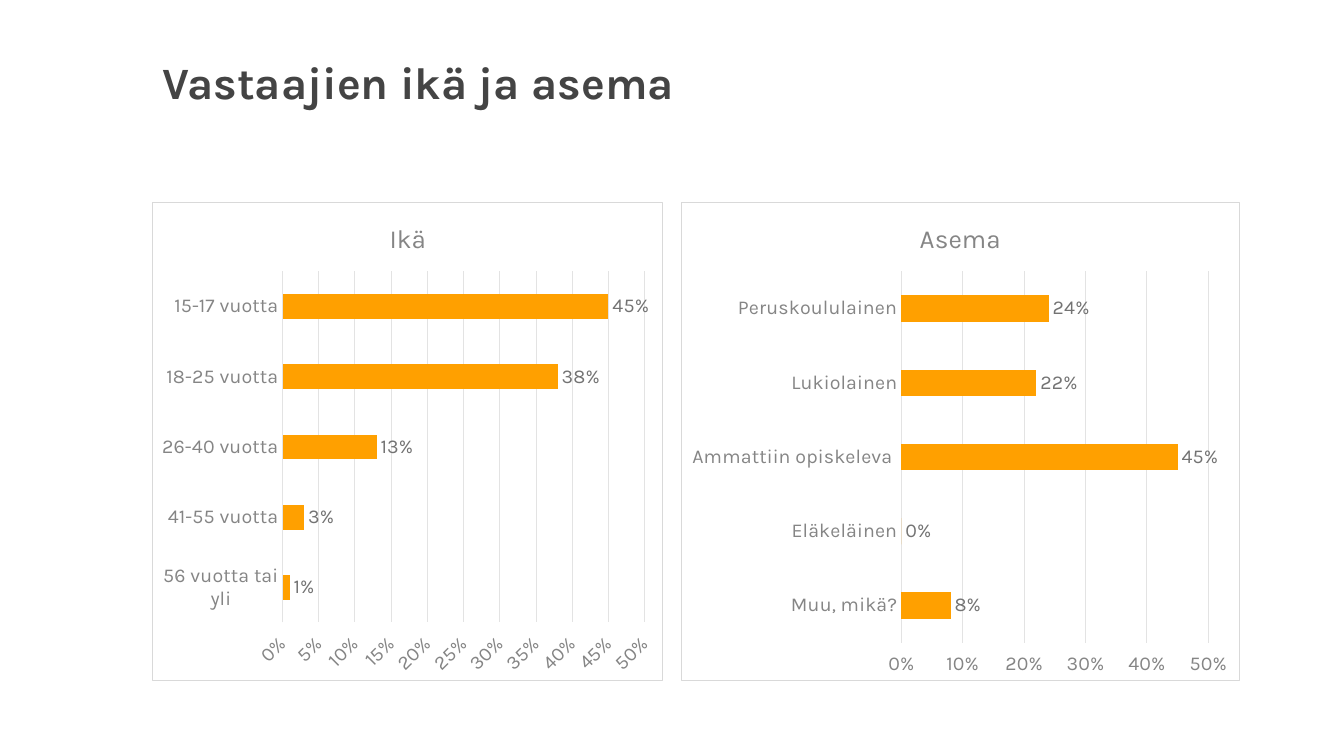
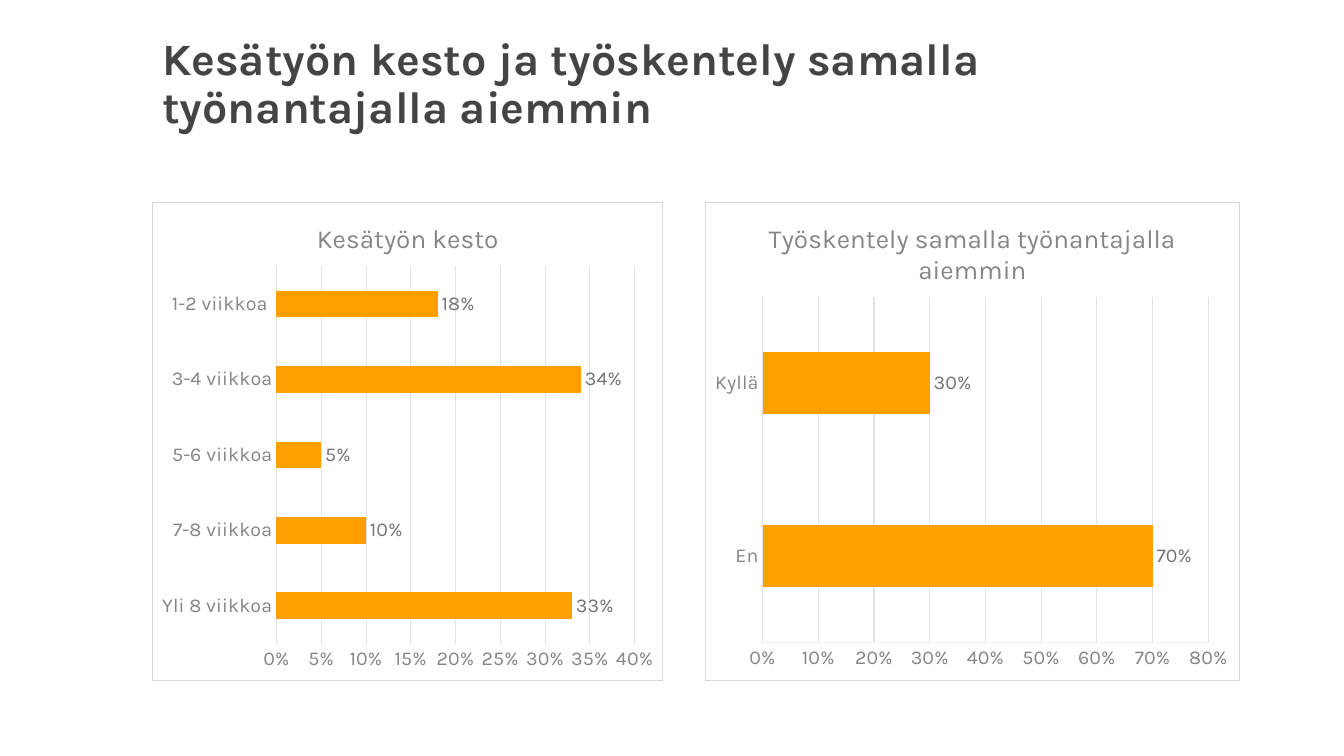
from dataclasses import dataclass
from typing import Any, NamedTuple

from pptx import Presentation
from pptx.chart.data import CategoryChartData
from pptx.dml.color import RGBColor
from pptx.enum.chart import XL_CHART_TYPE, XL_LABEL_POSITION, XL_TICK_LABEL_POSITION, XL_TICK_MARK
from pptx.enum.text import MSO_ANCHOR, MSO_AUTO_SIZE, PP_ALIGN
from pptx.oxml import parse_xml
from pptx.oxml.ns import nsdecls
from pptx.util import Inches, Pt

BAR = XL_CHART_TYPE.BAR_CLUSTERED
OUTSIDE = XL_LABEL_POSITION.OUTSIDE_END
NO_TICK = XL_TICK_MARK.NONE
HIGH = XL_TICK_LABEL_POSITION.HIGH
MIDDLE = MSO_ANCHOR.MIDDLE
FIXED = MSO_AUTO_SIZE.NONE
LEFT = PP_ALIGN.LEFT


class Box(NamedTuple):
    left: float
    top: float
    width: float
    height: float


@dataclass(frozen=True)
class Theme:
    face: str = "Karla"
    ink: str = "444444"
    axis: str = "858585"
    label: str = "737373"
    grid: str = "E3E3E3"
    pale: str = "F2F2F2"
    frame: str = "D9D9D9"
    bar: str = "FFA000"
    head: float = 32
    title: float = 18.6
    text: float = 14
    base: float = 10
    line: float = 0.75
    gap: int = 182


@dataclass(frozen=True)
class Panel:
    title: str
    left: float
    width: float
    rows: dict[str, float]
    plot: Box
    top: float
    step: float
    flip: bool = False
    tilt: int = 0
    base: bool = False


@dataclass(frozen=True)
class Page:
    title: str
    panels: tuple[Panel, ...]


THEME = Theme()
SIZE = (13.33, 7.5)
EDGE = 1.51
WIDTH = 10.79
HEAD = Box(EDGE, 0.27, WIDTH, 1.15)
TOP, HEIGHT = 2, 4.76
SLIM = 5.07
FORMAT = {"number_format": "0%", "number_format_is_linked": False}


def right(left: float) -> float:
    return EDGE + WIDTH - left


PAGES = (
    Page("Vastaajien ikä ja asema", (
        Panel("Ikä", EDGE, SLIM,
              {"15-17 vuotta": 0.45, "18-25 vuotta": 0.38, "26-40 vuotta": 0.13,
               "41-55 vuotta": 0.03, "56 vuotta tai yli": 0.01},
              Box(1.29, 0.69, 3.6, 3.49), 0.5, 0.05, flip=True, tilt=-45),
        Panel("Asema", 6.75, right(6.75),
              {"Peruskoululainen": 0.24, "Lukiolainen": 0.22,
               "Ammattiin opiskeleva ": 0.45, "Eläkeläinen": 0, "Muu, mikä?": 0.08},
              Box(2.19, 0.69, 3.05, 3.69), 0.5, 0.1, flip=True),
    )),
    Page("Kesätyön kesto ja työskentely samalla työnantajalla aiemmin", (
        Panel("Kesätyön kesto", EDGE, SLIM,
              {"Yli 8 viikkoa": 0.33, "7-8 viikkoa": 0.1, "5-6 viikkoa": 0.05,
               "3-4 viikkoa": 0.34, "1-2 viikkoa ": 0.18},
              Box(1.23, 0.64, 3.56, 3.75), 0.4, 0.05),
        Panel("Työskentely samalla työnantajalla aiemmin", 6.99, right(6.99),
              {"En": 0.7, "Kyllä": 0.3},
              Box(0.57, 0.94, 4.43, 3.44), 0.8, 0.1, base=True),
    )),
)


def put(target: Any, values: dict[str, Any]) -> None:
    for name, value in values.items():
        setattr(target, name, value)


def style(font: Any, size: float, color: str, bold: bool = False) -> None:
    put(font, {"name": THEME.face, "size": Pt(size), "bold": bold})
    font.color.rgb = RGBColor.from_string(color)


def stroke(line: Any, color: str) -> None:
    line.color.rgb = RGBColor.from_string(color)
    line.width = Pt(THEME.line)


def place(box: Box) -> dict[str, Any]:
    return {name: Inches(value) for name, value in box._asdict().items()}


def add_head(slide: Any, text: str) -> None:
    shape = slide.shapes.title
    put(shape, place(HEAD))
    frame = shape.text_frame
    frame.text = text
    put(frame, {"vertical_anchor": MIDDLE, "word_wrap": True, "auto_size": FIXED})
    para = frame.paragraphs[0]
    put(para, {"alignment": LEFT, "line_spacing": 0.9})
    style(para.runs[0].font, THEME.head, THEME.ink, True)


def set_frame(chart: Any) -> None:
    style(chart.font, THEME.base, THEME.ink)
    text = chart.element.xpath("./c:txPr")[0]
    text.addprevious(parse_xml(
        f'<c:spPr {nsdecls("c", "a")}><a:noFill/><a:ln w="{Pt(THEME.line)}">'
        f'<a:solidFill><a:srgbClr val="{THEME.frame}"/></a:solidFill></a:ln></c:spPr>'))


def set_plot(chart: Any, panel: Panel) -> None:
    area = chart.element.xpath("./c:chart/c:plotArea")[0]
    for old in area.xpath("./c:layout"):
        area.remove(old)
    spans = (panel.width, HEIGHT) * 2
    marks = "".join(f'<c:{tag} val="{value / span:.4f}"/>'
                    for tag, value, span in zip("xywh", panel.plot, spans))
    area.insert(0, parse_xml(
        f'<c:layout {nsdecls("c")}><c:manualLayout><c:layoutTarget val="inner"/>'
        f'<c:xMode val="edge"/><c:yMode val="edge"/>{marks}</c:manualLayout></c:layout>'))


def set_axes(chart: Any, panel: Panel) -> None:
    cats, vals = chart.category_axis, chart.value_axis
    for axis in (cats, vals):
        put(axis, {"major_tick_mark": NO_TICK, "minor_tick_mark": NO_TICK})
        style(axis.tick_labels.font, THEME.text, THEME.axis)
    cats.has_major_gridlines = False
    stroke(cats.format.line, THEME.grid)
    if panel.flip:
        cats.reverse_order = True
        vals.tick_label_position = HIGH
        chart.element.xpath(".//c:valAx/c:crosses")[0].set("val", "max")
    put(vals, {"minimum_scale": 0, "maximum_scale": panel.top,
               "major_unit": panel.step, "has_major_gridlines": True})
    put(vals.tick_labels, FORMAT)
    stroke(vals.major_gridlines.format.line, THEME.grid)
    if panel.base:
        stroke(vals.format.line, THEME.pale)
    else:
        vals.format.line.fill.background()
    if panel.tilt:
        body = chart.element.xpath(".//c:valAx/c:txPr/a:bodyPr")[0]
        body.set("rot", str(panel.tilt * 60000))


def set_bars(chart: Any) -> None:
    plot = chart.plots[0]
    put(plot, {"gap_width": THEME.gap, "vary_by_categories": False,
               "has_data_labels": True})
    labels = plot.data_labels
    put(labels, {**FORMAT, "show_value": True, "position": OUTSIDE})
    style(labels.font, THEME.text, THEME.label)
    fill = plot.series[0].format.fill
    fill.solid()
    fill.fore_color.rgb = RGBColor.from_string(THEME.bar)


def add_panel(slide: Any, panel: Panel) -> None:
    data = CategoryChartData(number_format="0%")
    data.categories = list(panel.rows)
    data.add_series("Series 1", list(panel.rows.values()))
    box = Box(panel.left, TOP, panel.width, HEIGHT)
    chart = slide.shapes.add_chart(BAR, *place(box).values(), data).chart
    put(chart, {"has_legend": False, "has_title": True})
    frame = chart.chart_title.text_frame
    frame.text = panel.title
    style(frame.paragraphs[0].runs[0].font, THEME.title, THEME.axis)
    set_frame(chart)
    set_plot(chart, panel)
    set_axes(chart, panel)
    set_bars(chart)


def main() -> None:
    deck = Presentation()
    deck.slide_width, deck.slide_height = map(Inches, SIZE)
    for page in PAGES:
        slide = deck.slides.add_slide(deck.slide_layouts[5])
        add_head(slide, page.title)
        for panel in page.panels:
            add_panel(slide, panel)
    deck.save("out.pptx")


if __name__ == "__main__":
    main()
